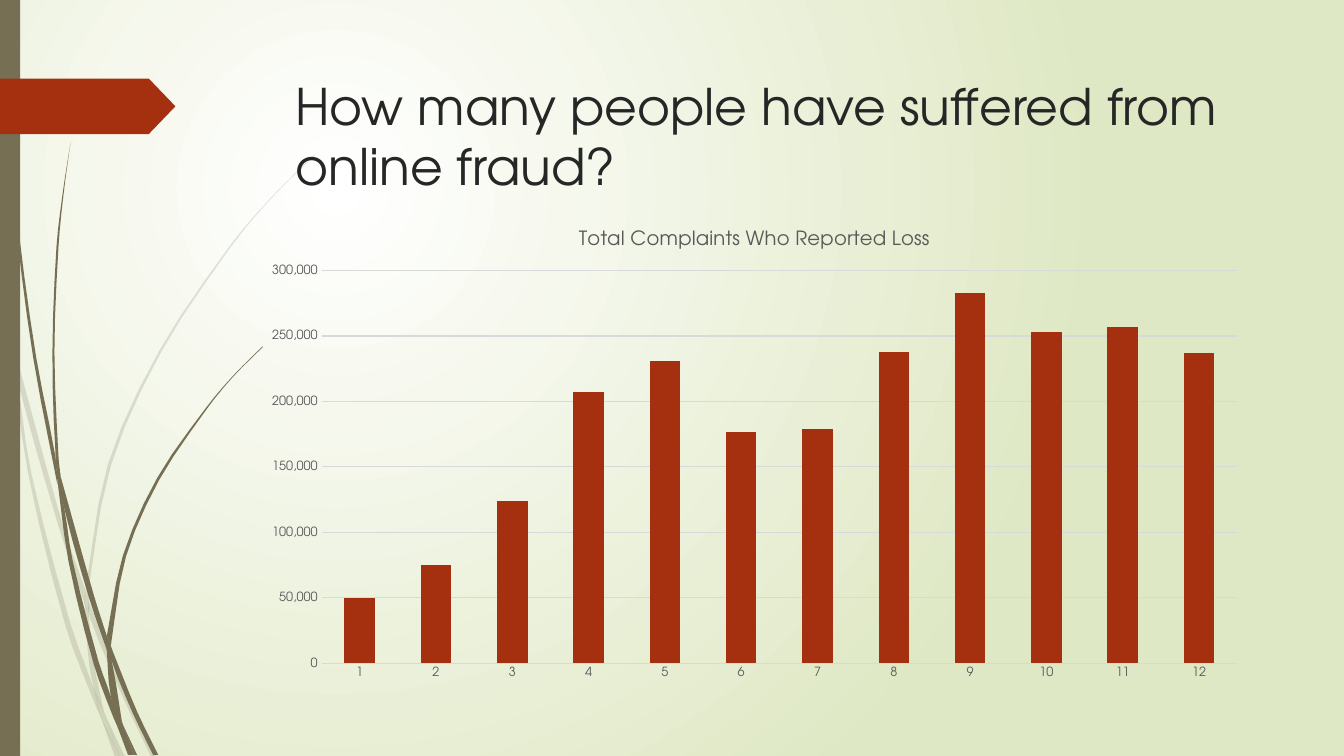
from lxml import etree
from pptx import Presentation
from pptx.chart.data import CategoryChartData
from pptx.dml.color import RGBColor
from pptx.enum.chart import XL_CHART_TYPE, XL_TICK_MARK
from pptx.enum.shapes import MSO_SHAPE
from pptx.enum.text import MSO_ANCHOR, PP_ALIGN
from pptx.oxml.ns import qn
from pptx.util import Inches, Pt

STACKED_COLUMNS = XL_CHART_TYPE.COLUMN_STACKED
NO_TICK = XL_TICK_MARK.NONE
RECTANGLE, ARROW_TAG = MSO_SHAPE.RECTANGLE, MSO_SHAPE.PENTAGON
TOP, LEFT = MSO_ANCHOR.TOP, PP_ALIGN.LEFT

WHITE = RGBColor(0xFF, 0xFF, 0xFF)
PALE_GREEN = RGBColor(0xDF, 0xE8, 0xC4)
OLIVE = RGBColor(0x76, 0x6F, 0x54)
RUST = RGBColor(0xA5, 0x30, 0x10)
INK = RGBColor(0x26, 0x26, 0x26)
GREY = RGBColor(0x59, 0x59, 0x59)
GRID_GREY = RGBColor(0xD9, 0xD9, 0xD9)
FONT = "TeX Gyre Adventor"

COMPLAINTS = [50000, 75000, 124000, 207000, 231000, 177000,
              179000, 238000, 283000, 253000, 257000, 237000]

# Each part of a grass stem is a left and a right edge, running downwards, in inches.
FAINT_GRASS = [
    ([(0, 2.99), (0.1, 3.44), (0.11, 3.5)], [(0, 2.82), (0.09, 3.22), (0.11, 3.5)]),
    ([(0.14, 3.45), (0.17, 3.76), (0.58, 5.22), (0.84, 5.99)],
     [(0.14, 3.45), (0.62, 5.2), (0.85, 5.86)]),
    ([(0.88, 5.96), (0.88, 6.1), (1.23, 6.94), (1.5, 7.51)],
     [(0.88, 5.96), (0.92, 6.07), (1.27, 6.92), (1.55, 7.51)]),
    ([(1.05, 7.11), (1.19, 7.51)], [(1.05, 7.11), (1.24, 7.51)]),
    ([(0.11, 3.5), (0.28, 4.7), (0.65, 6.21), (0.92, 6.93), (1.01, 7.14)],
     [(0.11, 3.5), (0.17, 3.76), (0.31, 4.69), (0.7, 6.19), (0.93, 6.83), (0.99, 7.07)]),
    ([(0.84, 5.99), (0.87, 6.46), (0.93, 6.83), (1.05, 7.11)],
     [(0.84, 5.99), (0.88, 6.1), (0.91, 6.46), (1.03, 7.06)]),
    ([(3.12, 1.53), (2.68, 1.97), (2.28, 2.44), (1.58, 3.48), (1.07, 4.61), (0.85, 5.84)],
     [(3.12, 1.54), (2.68, 1.98), (2.29, 2.45), (1.6, 3.49), (1.1, 4.62), (0.88, 5.84), (0.88, 5.96)]),
    ([(1.01, 7.14), (1.14, 7.51)], [(1.01, 7.14), (1.19, 7.51)]),
    ([(0.85, 5.86), (0.84, 5.99), (0.88, 6.08)], [(0.85, 5.86), (0.88, 5.96), (0.88, 6.1)]),
    ([(0.93, 6.83), (1.01, 7.14), (1.19, 7.51)], [(0.93, 6.83), (1.05, 7.11), (1.19, 7.51)]),
]
DARK_GRASS = [
    ([(0.03, 0), (0.07, 1.1), (0.17, 2.33), (0.33, 3.55), (0.57, 4.81)],
     [(0.04, 0), (0.08, 1.09), (0.19, 2.32), (0.36, 3.55), (0.55, 4.53), (0.57, 4.81)]),
    ([(0.6, 4.72), (0.64, 5.05), (0.88, 5.92), (1.06, 6.45)], [(0.6, 4.72), (0.93, 5.9), (1.06, 6.31)]),
    ([(1.1, 6.41), (1.11, 6.56), (1.32, 7.08), (1.52, 7.49)],
     [(1.1, 6.41), (1.13, 6.49), (1.36, 7.06), (1.57, 7.49)]),
    ([(0.57, 4.77), (0.68, 5.57), (0.93, 6.59), (1.11, 7.08), (1.17, 7.22)],
     [(0.57, 4.77), (0.64, 5.05), (0.72, 5.56), (0.98, 6.57), (1.1, 6.91), (1.16, 7.17)]),
    ([(0.7, 1.41), (0.62, 1.93), (0.56, 2.45), (0.52, 3.49), (0.55, 4.49), (0.6, 4.72)],
     [(0.7, 1.41), (0.63, 1.93), (0.58, 2.45), (0.54, 3.49), (0.58, 4.53), (0.6, 4.72)]),
    ([(1.22, 7.19), (1.33, 7.49)], [(1.22, 7.19), (1.36, 7.49)]),
    ([(0.55, 4.49), (0.57, 4.77), (0.64, 5.05)], [(0.55, 4.49), (0.6, 4.72), (0.64, 5.05)]),
    ([(2.6, 3.44), (2.31, 3.73), (2.04, 4.05), (1.56, 4.74), (1.22, 5.51), (1.06, 6.31)],
     [(2.61, 3.44), (2.31, 3.74), (2.05, 4.06), (1.58, 4.76), (1.25, 5.52), (1.11, 6.33), (1.1, 6.41)]),
    ([(1.17, 7.22), (1.27, 7.49)], [(1.17, 7.22), (1.31, 7.49)]),
    ([(1.06, 6.45), (1.1, 6.91), (1.22, 7.19)], [(1.06, 6.45), (1.11, 6.56), (1.21, 7.16)]),
    ([(1.06, 6.31), (1.06, 6.45), (1.11, 6.56)], [(1.06, 6.31), (1.1, 6.41), (1.11, 6.56)]),
    ([(1.1, 6.91), (1.17, 7.22), (1.3, 7.49)], [(1.1, 6.91), (1.22, 7.19), (1.33, 7.49)]),
]


def smooth_edge(anchors, steps=3):
    """Cubic curve through the anchors, with x as a function of y."""
    slopes = [(after[0] - before[0]) / (after[1] - before[1]) for before, after in
              zip(anchors[:1] + anchors[:-1], anchors[1:] + anchors[-1:])]
    curve = [anchors[0]]
    for i, ((x0, y0), (x1, y1)) in enumerate(zip(anchors, anchors[1:])):
        height = y1 - y0
        for t in (step / steps for step in range(1, steps + 1)):
            x = (x0 * (1 + 2 * t) * (1 - t) ** 2 + x1 * t * t * (3 - 2 * t)
                 + height * t * (1 - t) * (slopes[i] * (1 - t) - slopes[i + 1] * t))
            curve.append((x, y0 + height * t))
    return curve


class SlideBuilder:
    def __init__(self, slide, font):
        self.slide = slide
        self.font = font

    def style(self, font, size, color):
        font.name, font.size, font.color.rgb = self.font, Pt(size), color

    def paint(self, shape, color):
        shape.shadow.inherit = False
        shape.fill.solid()
        shape.fill.fore_color.rgb = color
        shape.line.fill.background()

    def background(self, center, edge):
        """Radial gradient centred a quarter in from the top left."""
        fill = self.slide.background.fill
        fill.gradient()
        for stop, color in zip(fill.gradient_stops, (center, edge)):
            stop.color.rgb = color
        linear = self.slide.element.find(".//" + qn("a:lin"))
        radial = etree.Element(qn("a:path"), {"path": "circle"})
        etree.SubElement(radial, qn("a:fillToRect"),
                         {"l": "50000", "t": "50000", "r": "100000", "b": "100000"})
        linear.getparent().replace(linear, radial)

    def grass(self, stems, color, opacity=100):
        for left_edge, right_edge in stems:
            outline = [(Inches(x), Inches(y)) for x, y in
                       smooth_edge(left_edge) + smooth_edge(right_edge)[::-1]]
            builder = self.slide.shapes.build_freeform(*outline[0], scale=1.0)
            builder.add_line_segments(outline[1:], close=True)
            stem = builder.convert_to_shape()
            self.paint(stem, color)
            if opacity < 100:
                tint = stem.element.spPr.find(qn("a:solidFill") + "/" + qn("a:srgbClr"))
                etree.SubElement(tint, qn("a:alpha"), {"val": str(opacity * 1000)})

    def shape(self, kind, box, color):
        block = self.slide.shapes.add_shape(kind, *map(Inches, box))
        self.paint(block, color)
        return block

    def title(self, text, box, size, color):
        heading = self.slide.shapes.title
        heading.left, heading.top, heading.width, heading.height = map(Inches, box)
        frame = heading.text_frame
        frame.word_wrap = True
        frame.vertical_anchor = TOP
        frame.paragraphs[0].alignment = LEFT
        run = frame.paragraphs[0].add_run()
        run.text = text
        self.style(run.font, size, color)
        self.slide.shapes.element.append(heading.element)  # in front of the grass

    def column_chart(self, title, values, box, color):
        data = CategoryChartData(number_format="#,##0")
        data.categories = [str(i) for i in range(1, len(values) + 1)]
        data.add_series("Series 1", values)
        chart = self.slide.shapes.add_chart(STACKED_COLUMNS, *map(Inches, box), data).chart
        self.style(chart.font, 10, GREY)
        chart.has_legend = False
        run = chart.chart_title.text_frame.paragraphs[0].add_run()
        run.text = title
        run.font.bold = False
        self.style(run.font, 14, GREY)
        chart.chart_title.include_in_layout = False

        plot = chart.plots[0]
        plot.gap_width, plot.overlap = 150, 100
        plot.vary_by_categories = False
        fill = plot.series[0].format.fill
        fill.solid()
        fill.fore_color.rgb = color

        for axis in (chart.category_axis, chart.value_axis):
            axis.major_tick_mark = axis.minor_tick_mark = NO_TICK
            axis.format.line.fill.background()
            self.style(axis.tick_labels.font, 9, GREY)
        amounts = chart.value_axis
        amounts.minimum_scale, amounts.maximum_scale = 0, 300000
        amounts.major_unit = 50000
        amounts.tick_labels.number_format = "#,##0"
        amounts.tick_labels.number_format_is_linked = False
        gridline = amounts.major_gridlines.format.line
        gridline.color.rgb, gridline.width = GRID_GREY, Pt(0.75)


def main():
    deck = Presentation()
    deck.slide_width, deck.slide_height = Inches(13.33), Inches(7.5)
    page = SlideBuilder(deck.slides.add_slide(deck.slide_layouts[5]), FONT)
    page.background(WHITE, PALE_GREEN)
    page.grass(FAINT_GRASS, OLIVE, opacity=20)
    page.grass(DARK_GRASS, OLIVE)
    page.shape(RECTANGLE, (0, 0, 0.2, 7.5), OLIVE)
    tag = page.shape(ARROW_TAG, (0, 0.78, 1.74, 0.55), RUST)
    tag.adjustments[0] = 0.48
    page.title("How many people have suffered from online fraud?",
               (2.83, 0.69, 9.75, 1.4), 36, INK)
    page.column_chart("Total Complaints Who Reported Loss", COMPLAINTS,
                      (2.5, 2.08, 9.97, 4.75), RUST)
    deck.save("out.pptx")


if __name__ == "__main__":
    main()
